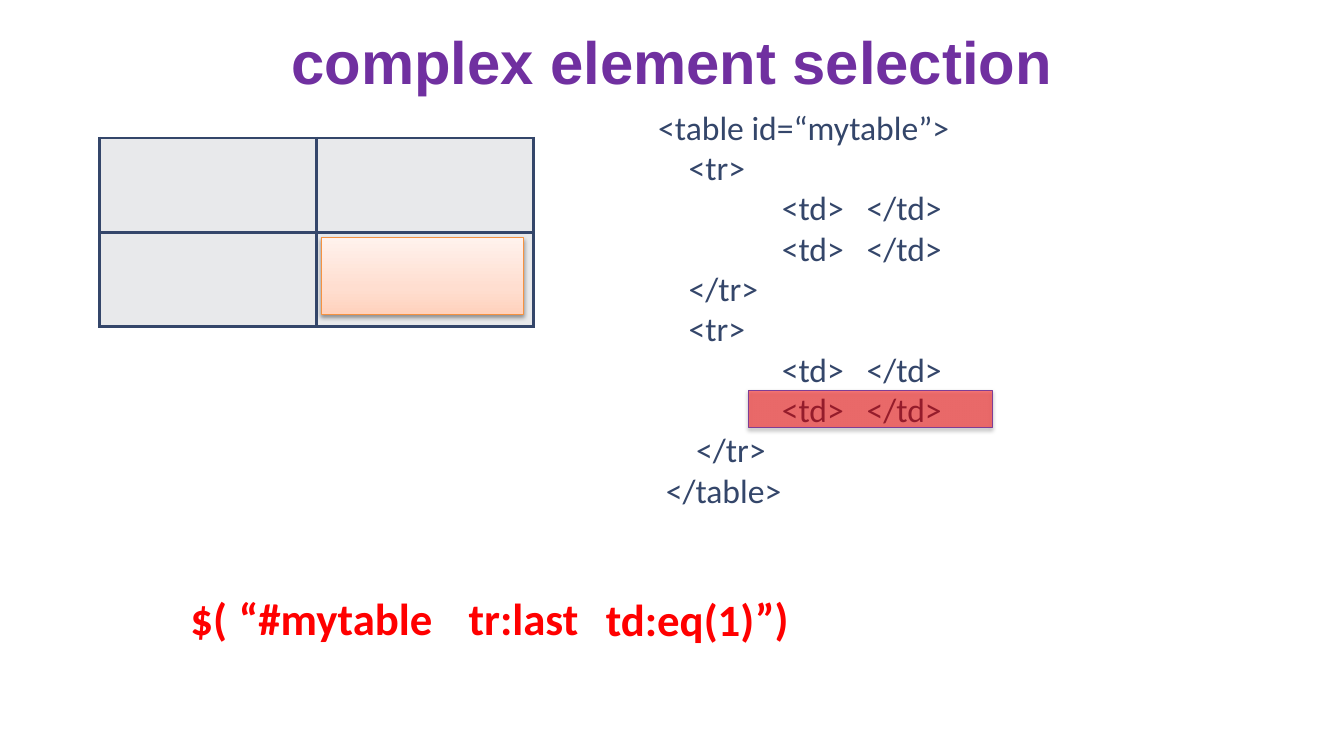
from lxml import etree
from pptx import Presentation
from pptx.dml.color import RGBColor
from pptx.enum.shapes import MSO_SHAPE
from pptx.enum.text import MSO_ANCHOR, PP_ALIGN
from pptx.oxml import parse_xml
from pptx.oxml.ns import nsdecls, qn
from pptx.util import Inches, Pt

TITLE = "complex element selection"
MARKUP = [
    "<table id=“mytable”>",
    "    <tr>",
    "\t   <td>   </td>",
    "\t   <td>   </td>",
    "    </tr>",
    "    <tr>",
    "\t   <td>   </td>",
    "\t   <td>   </td>",
    "     </tr>",
    " </table>",
]
MARKUP_TAB = 1
# text, left, top, width
SELECTOR = [
    ("$(", 1.79, 5.81, 0.72),
    ("“#mytable", 2.27, 5.81, 2.21),
    ("tr:last", 4.55, 5.81, 1.3),
    ("td:eq(1)", 5.91, 5.82, 1.78),
    ("”)", 7.39, 5.81, 0.78),
]
SELECTOR_HEIGHT = 0.64
GRID_ROWS, GRID_COLS = 2, 2
GRID_BOX = (0.99, 1.37, 4.3, 1.87)
CELL_MARK_BOX = (3.19, 2.36, 2, 0.76)
LINE_MARK_BOX = (7.42, 3.87, 2.42, 0.37)
CELL_MARK_STOPS = [(0, "FFD2BD"), (35, "FFDED0"), (100, "FFF2ED")]
COLORS = {
    "title": "7030A0",
    "ink": "34466A",
    "cell": "E8E9EB",
    "selector": "FF0000",
    "cell_mark_line": "F69240",
    "line_mark": "FF0000",
    "line_mark_line": "7F3E95",
    "shadow": "000000",
}


def rgb(name):
    return RGBColor.from_string(COLORS[name])


def add_text(slide, lines, box, size, color, font="Calibri", bold=False):
    frame = slide.shapes.add_textbox(*map(Inches, box)).text_frame
    frame.word_wrap = True
    frame.text = "\n".join(lines)
    for paragraph in frame.paragraphs:
        for run in paragraph.runs:
            run.font.name = font
            run.font.size = Pt(size)
            run.font.bold = bold
            run.font.color.rgb = rgb(color)
    return frame


def set_tab(frame, position):
    for paragraph in frame.paragraphs:
        paragraph._p.get_or_add_pPr().append(parse_xml(
            f'<a:tabLst {nsdecls("a")}><a:tab pos="{Inches(position)}" algn="l"/>'
            '</a:tabLst>'))


def add_grid(slide):
    grid = slide.shapes.add_table(GRID_ROWS, GRID_COLS, *map(Inches, GRID_BOX)).table
    grid.first_row = grid.horz_banding = False
    for cell in grid.iter_cells():
        properties = cell._tc.get_or_add_tcPr()
        for side in ("lnL", "lnR", "lnT", "lnB"):
            properties.append(parse_xml(
                f'<a:{side} {nsdecls("a")} w="{Pt(2.25)}"><a:solidFill>'
                f'<a:srgbClr val="{COLORS["ink"]}"/></a:solidFill></a:{side}>'))
        cell.fill.solid()
        cell.fill.fore_color.rgb = rgb("cell")


def add_mark(slide, box, line, distance, opacity):
    """Add a thin-outlined rectangle with a soft shadow straight below it."""
    mark = slide.shapes.add_shape(MSO_SHAPE.RECTANGLE, *map(Inches, box))
    mark.line.color.rgb = rgb(line)
    mark.line.width = Pt(0.75)
    mark.shadow.inherit = False
    effects = mark._element.spPr.find(qn("a:effectLst"))
    effects.append(parse_xml(
        f'<a:outerShdw {nsdecls("a")} blurRad="{Pt(3.1)}" dist="{Pt(distance)}" '
        f'dir="5400000" rotWithShape="0"><a:srgbClr val="{COLORS["shadow"]}">'
        f'<a:alpha val="{opacity * 1000}"/></a:srgbClr></a:outerShdw>'))
    return mark


def fill_cell_mark(mark):
    mark.fill.gradient()
    properties = mark._element.spPr
    stops = "".join(
        f'<a:gs pos="{position * 1000}"><a:srgbClr val="{color}"/></a:gs>'
        for position, color in CELL_MARK_STOPS)
    properties.replace(properties.find(qn("a:gradFill")), parse_xml(
        f'<a:gradFill {nsdecls("a")} rotWithShape="1"><a:gsLst>{stops}</a:gsLst>'
        '<a:lin ang="16200000" scaled="0"/></a:gradFill>'))


def fill_line_mark(mark):
    mark.fill.solid()
    mark.fill.fore_color.rgb = rgb("line_mark")
    color = mark._element.spPr.find(qn("a:solidFill")).find(qn("a:srgbClr"))
    etree.SubElement(color, qn("a:alpha")).set("val", "50000")


def main():
    deck = Presentation()
    deck.slide_width, deck.slide_height = Inches(13.33), Inches(7.5)
    slide = deck.slides.add_slide(deck.slide_layouts[6])

    title = add_text(slide, [TITLE], (0.22, 0.19, 12.89, 0.82), 42.7, "title",
                     font="Arial", bold=True)
    title.vertical_anchor = MSO_ANCHOR.MIDDLE
    title.paragraphs[0].alignment = PP_ALIGN.CENTER

    add_grid(slide)
    markup = add_text(slide, MARKUP, (6.43, 1.01, 6.02, 4.14), 24, "ink")
    set_tab(markup, MARKUP_TAB)
    fill_cell_mark(add_mark(slide, CELL_MARK_BOX, "cell_mark_line", 1.6, 38))
    fill_line_mark(add_mark(slide, LINE_MARK_BOX, "line_mark_line", 1.8, 35))
    for part, left, top, width in SELECTOR:
        add_text(slide, [part], (left, top, width, SELECTOR_HEIGHT), 32,
                 "selector", bold=True)

    deck.save("out.pptx")


if __name__ == "__main__":
    main()
